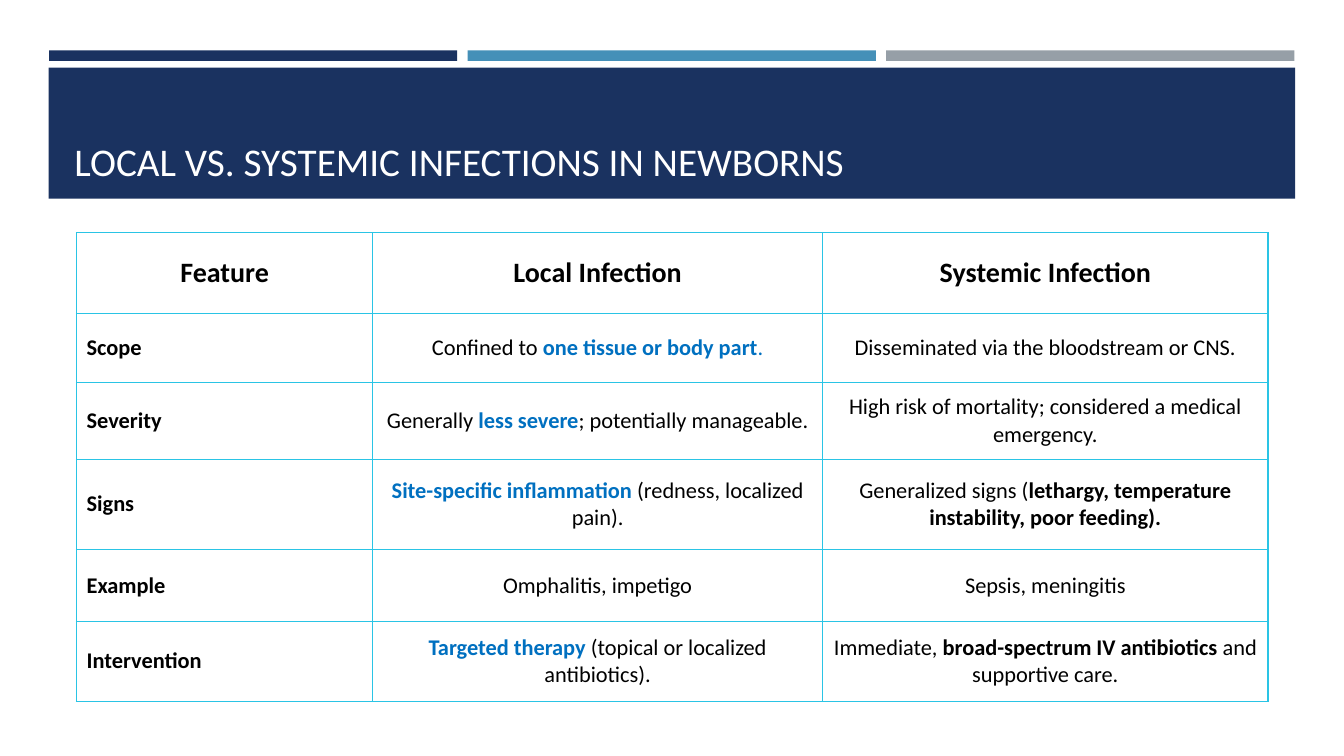
import dataclasses

import pptx
import pptx.dml.color
import pptx.enum.shapes
import pptx.enum.text
import pptx.oxml
import pptx.oxml.ns
import pptx.util

Pt = pptx.util.Pt
ALIGN = pptx.enum.text.PP_ALIGN
ANCHOR = pptx.enum.text.MSO_ANCHOR


@dataclasses.dataclass(frozen=True)
class Theme:
    font: str = "Calibri"
    navy: str = "1A3260"
    blue: str = "4590B8"
    gray: str = "969FA7"
    white: str = "FFFFFF"
    black: str = "000000"
    accent: str = "0070C0"
    border: str = "2AC4E5"
    title_size: int = 28
    head_size: int = 20
    body_size: int = 16


def rgb(color):
    return pptx.dml.color.RGBColor.from_string(color)


class Deck:
    def __init__(self, theme):
        self.theme = theme
        self.prs = pptx.Presentation()
        self.prs.slide_width, self.prs.slide_height = Pt(960), Pt(540)
        self.slide = self.prs.slides.add_slide(self.prs.slide_layouts[5])

    def add_runs(self, p, runs, size, align, color, bold=False):
        p.alignment = align
        for text, style in runs:
            r = p.add_run()
            r.text = text
            fmt = {"name": self.theme.font, "size": Pt(size), "bold": bold}
            fmt.update((k, v) for k, v in style.items() if k != "color")
            for name, value in fmt.items():
                setattr(r.font, name, value)
            r.font.color.rgb = rgb(style.get("color", color))

    def bar(self, x, y, w, h, color):
        sp = self.slide.shapes.add_shape(
            pptx.enum.shapes.MSO_SHAPE.RECTANGLE, Pt(x), Pt(y), Pt(w), Pt(h))
        sp.shadow.inherit = False
        sp.fill.solid()
        sp.fill.fore_color.rgb = rgb(color)
        sp.line.fill.background()

    def title(self, text, x, y, w, h):
        sp = self.slide.shapes.title
        self.slide.shapes._spTree.append(sp._element)
        box = {"left": x, "top": y, "width": w, "height": h}
        for name, value in box.items():
            setattr(sp, name, Pt(value))
        tf = sp.text_frame
        frame = {"word_wrap": True, "vertical_anchor": ANCHOR.BOTTOM,
                 "auto_size": pptx.enum.text.MSO_AUTO_SIZE.NONE}
        for name, value in frame.items():
            setattr(tf, name, value)
        self.add_runs(tf.paragraphs[0], [(text, {})], self.theme.title_size,
                      ALIGN.LEFT, self.theme.white)

    def cell_borders(self, cell):
        tc_pr = cell._tc.get_or_add_tcPr()
        for side in ("lnL", "lnR", "lnT", "lnB"):
            tc_pr.append(pptx.oxml.parse_xml(
                f'<a:{side} {pptx.oxml.ns.nsdecls("a")} w="12700"><a:solidFill>'
                f'<a:srgbClr val="{self.theme.border}"/></a:solidFill></a:{side}>'))

    def table(self, rows, x, y, widths, heights):
        t = self.theme
        tbl = self.slide.shapes.add_table(
            len(rows), len(widths), Pt(x), Pt(y),
            Pt(sum(widths)), Pt(sum(heights))).table
        for col, w in zip(tbl.columns, widths):
            col.width = Pt(w)
        for row, h in zip(tbl.rows, heights):
            row.height = Pt(h)
        for i, row in enumerate(rows):
            for j, runs in enumerate(row):
                cell = tbl.cell(i, j)
                self.cell_borders(cell)
                cell.fill.solid()
                cell.fill.fore_color.rgb = rgb(t.white)
                cell.vertical_anchor = ANCHOR.MIDDLE
                head, label = i == 0, j == 0
                self.add_runs(cell.text_frame.paragraphs[0],
                              [(runs, {})] if isinstance(runs, str) else runs,
                              t.head_size if head else t.body_size,
                              ALIGN.LEFT if label and not head else ALIGN.CENTER,
                              t.black, head or label)


def main():
    theme = Theme()
    bold = {"bold": True}
    blue = {"color": theme.accent}
    key = {**bold, **blue}
    rows = [
        ("Feature", "Local Infection", "Systemic Infection"),
        ("Scope",
         [("Confined to ", {}), ("one tissue or body part", key), (".", blue)],
         "Disseminated via the bloodstream or CNS."),
        ("Severity",
         [("Generally ", {}), ("less severe", key),
          ("; potentially manageable.", {})],
         "High risk of mortality; considered a medical emergency."),
        ("Signs",
         [("Site-specific inflammation ", key),
          ("(redness, localized pain).", {})],
         [("Generalized signs (", {}),
          ("lethargy, temperature instability, poor feeding).", bold)]),
        ("Example", "Omphalitis, impetigo", "Sepsis, meningitis"),
        ("Intervention",
         [("Targeted therapy ", key),
          ("(topical or localized antibiotics).", {})],
         [("Immediate, ", {}), ("broad-spectrum IV antibiotics ", bold),
          ("and supportive care.", {})]),
    ]
    deck = Deck(theme)
    for i, color in enumerate((theme.navy, theme.blue, theme.gray)):
        deck.bar(35 + 299 * i, 36, 291.6, 7.5, color)
    deck.bar(34.8, 48.4, 890.4, 93.6, theme.navy)
    deck.title("LOCAL VS. SYSTEMIC INFECTIONS IN NEWBORNS", 46, 55.4, 868, 80)
    deck.table(rows, 54.7, 166.2, (211.5, 321.4, 318.2),
               (57.6, 49.6, 54.6, 64.5, 51.4, 57))
    deck.prs.save("out.pptx")


if __name__ == "__main__":
    main()
